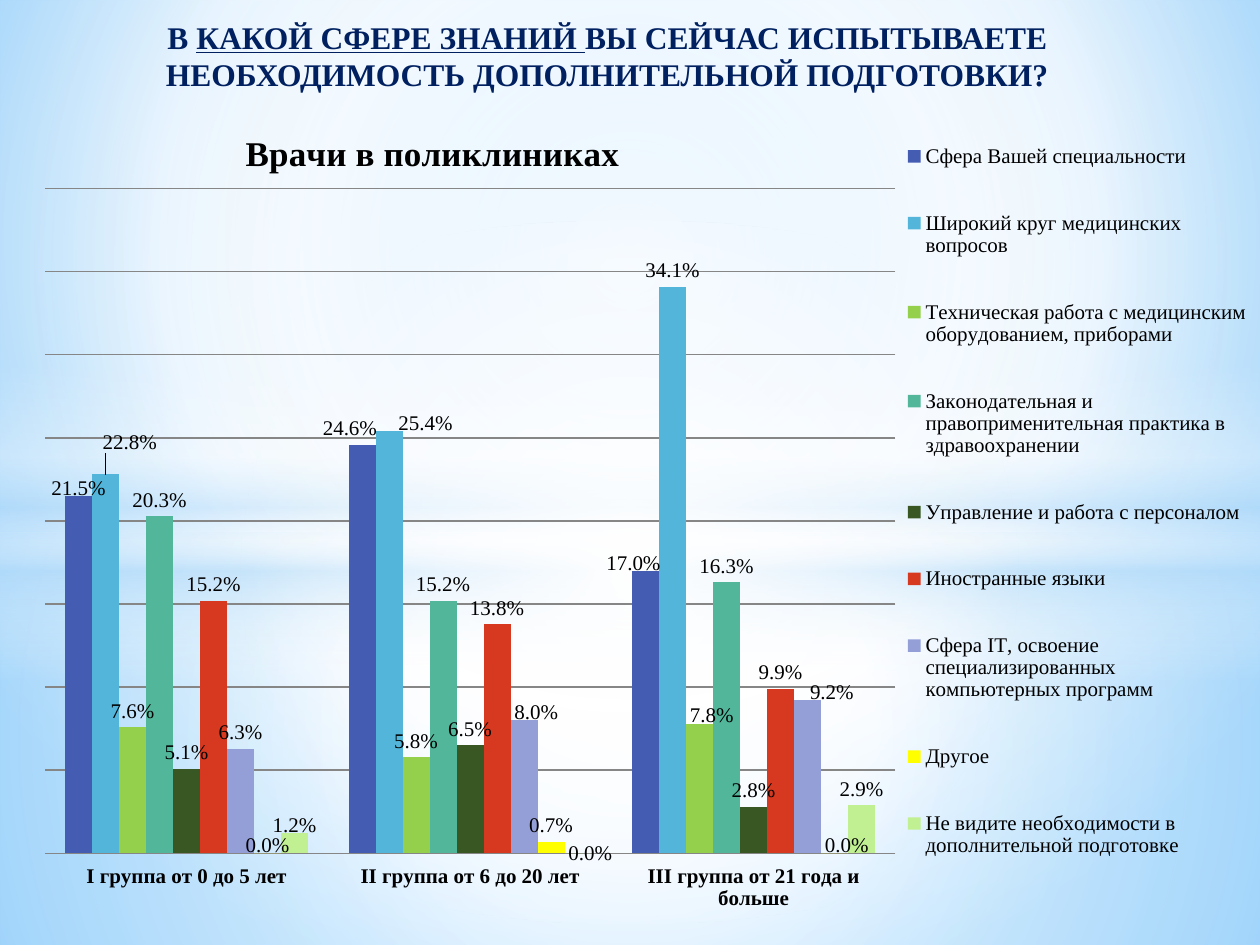
from dataclasses import dataclass, field
from typing import Optional

from lxml.etree import SubElement
from pptx import Presentation
from pptx.chart.data import CategoryChartData
from pptx.dml.color import RGBColor
from pptx.enum.chart import XL_CHART_TYPE as ChartType
from pptx.enum.chart import XL_LABEL_POSITION as LabelPos
from pptx.enum.chart import XL_LEGEND_POSITION as LegendPos
from pptx.enum.chart import XL_TICK_LABEL_POSITION as TickLabelPos
from pptx.enum.chart import XL_TICK_MARK as TickMark
from pptx.enum.shapes import MSO_SHAPE as Shape
from pptx.enum.text import PP_ALIGN as Align
from pptx.oxml import parse_xml
from pptx.oxml.ns import nsdecls, qn
from pptx.util import Cm, Pt

FONT = "Times New Roman"
FORMAT = "0.0%"
COLORS = {
    "sky": "9ED5FF", "white": "FFFFFF", "blue": "5BB9FF", "haze": "B4DCFA",
    "navy": "002060", "black": "000000", "grid": "868686",
    "indigo": "455CB3", "cyan": "52B5D9", "lime": "95D04C", "teal": "52B69A",
    "forest": "385723", "red": "D73920", "lilac": "949FD7", "yellow": "FFFF00",
    "pale_lime": "C1F092",
}


@dataclass
class Stop:
    pos: int
    color: str
    alpha: int = 100


@dataclass
class Glow:
    kind: Shape
    top: float
    height: float
    stops: list[Stop]
    angle: Optional[int] = None


@dataclass
class Series:
    name: str
    values: tuple[float, ...]
    color: str
    shifts: dict[int, tuple[float, float]] = field(default_factory=dict)


GLOWS = [
    Glow(Shape.RECTANGLE, 10.74, 8.31,
         [Stop(0, "white", 91), Stop(37, "white", 76), Stop(100, "haze", 79)]),
    Glow(Shape.RECTANGLE, 0, 10.74,
         [Stop(0, "white", 89), Stop(48, "white", 62), Stop(100, "haze", 79)]),
    Glow(Shape.RECTANGLE, 7.37, 6.35,
         [Stop(0, "white", 0), Stop(29, "white", 30), Stop(45, "haze", 40),
          Stop(55, "white", 26), Stop(65, "haze", 60), Stop(100, "white", 0)], 90),
    Glow(Shape.OVAL, 4.44, 14.17, [Stop(0, "white"), Stop(54, "white", 0)]),
]
GROUPS = ["I группа от 0 до 5 лет", "II группа от 6 до 20 лет",
          "III группа от 21 года и больше"]
SERIES = [
    Series("Сфера Вашей специальности", (0.215, 0.246, 0.17), "indigo",
           {0: (0, 0.01), 1: (-0.01, 0), 2: (-0.01, 0.01)}),
    Series("Широкий круг медицинских вопросов", (0.228, 0.254, 0.341), "cyan",
           {0: (0.02, -0.02), 1: (0.03, 0.01)}),
    Series("Техническая работа с медицинским оборудованием, приборами",
           (0.076, 0.058, 0.078), "lime", {2: (0.01, 0.01)}),
    Series("Законодательная и правоприменительная практика в здравоохранении",
           (0.203, 0.152, 0.163), "teal"),
    Series("Управление и работа с персоналом", (0.051, 0.065, 0.028), "forest"),
    Series("Иностранные языки", (0.152, 0.138, 0.099), "red"),
    Series("Сфера IT, освоение специализированных компьютерных программ",
           (0.063, 0.08, 0.092), "lilac", {1: (0.01, 0.01), 2: (0.02, 0.01)}),
    Series("Другое", (0, 0.007, 0), "yellow", {0: (0, 0.01), 2: (0.01, 0.01)}),
    Series("Не видите необходимости в дополнительной подготовке",
           (0.012, 0, 0.029), "pale_lime", {0: (0, 0.01), 1: (0.01, 0.02)}),
]
TITLE = [("В ", False), ("КАКОЙ СФЕРЕ ЗНАНИЙ ", True),
         ("ВЫ СЕЙЧАС ИСПЫТЫВАЕТЕ НЕОБХОДИМОСТЬ ДОПОЛНИТЕЛЬНОЙ ПОДГОТОВКИ?", False)]


def rgb(name: str) -> RGBColor:
    return RGBColor.from_string(COLORS[name])


def style(font, size: int, color: str, bold: bool = False) -> None:
    font.name, font.size, font.bold = FONT, Pt(size), bold
    font.color.rgb = rgb(color)


def gradient(stops: list[Stop], angle: Optional[int] = None,
             center: tuple[int, ...] = (50, 50, 50, 50)):
    items = "".join(
        f'<a:gs pos="{s.pos * 1000}"><a:srgbClr val="{COLORS[s.color]}">'
        f'<a:alpha val="{s.alpha * 1000}"/></a:srgbClr></a:gs>' for s in stops)
    if angle is None:
        sides = " ".join(f'{k}="{v * 1000}"' for k, v in zip("ltrb", center))
        shade = f'<a:path path="circle"><a:fillToRect {sides}/></a:path>'
    else:
        shade = f'<a:lin ang="{angle * 60000}" scaled="0"/>'
    return parse_xml(f'<a:gradFill {nsdecls("a")} rotWithShape="1">'
                     f'<a:gsLst>{items}</a:gsLst>{shade}</a:gradFill>')


def set_background(slide) -> None:
    slide.background.fill.solid()
    old = slide.element.find(f'.//{qn("p:bgPr")}/{qn("a:solidFill")}')
    stops = [Stop(0, "sky"), Stop(60, "white"), Stop(100, "blue")]
    old.getparent().replace(old, gradient(stops, center=(20, 10, 20, 60)))


def add_glow(slide, glow: Glow) -> None:
    s = slide.shapes.add_shape(glow.kind, 0, Cm(glow.top), Cm(25.4), Cm(glow.height))
    s.shadow.inherit = False
    s.line.fill.background()
    s.fill.solid()
    old = s.element.spPr.find(qn("a:solidFill"))
    s.element.spPr.replace(old, gradient(glow.stops, glow.angle))


def place(parent, index: int, inner: bool = False, edge: bool = True, **box: float) -> None:
    for old in parent.findall(qn("c:layout")):
        parent.remove(old)
    layout = parse_xml(f'<c:layout {nsdecls("c")}><c:manualLayout/></c:layout>')
    parent.insert(index, layout)
    entries = {"layoutTarget": "inner"} if inner else {}
    if edge:
        entries |= {"xMode": "edge", "yMode": "edge"}
    for key, value in (entries | box).items():
        SubElement(layout[0], qn(f"c:{key}"), val=str(value))


def style_series(plot_series, series: Series) -> None:
    plot_series.format.fill.solid()
    plot_series.format.fill.fore_color.rgb = rgb(series.color)
    plot_series.invert_if_negative = False
    labels = plot_series.data_labels
    labels.show_value = True
    labels.number_format, labels.number_format_is_linked = FORMAT, False
    labels.position = LabelPos.OUTSIDE_END
    style(labels.font, 12, "black")
    for i, (dx, dy) in series.shifts.items():
        plot_series.points[i].data_label.position = LabelPos.OUTSIDE_END
        label = labels._element.find(f'{qn("c:dLbl")}[{qn("c:idx")}][@val]')
        label = next(d for d in labels._element.findall(qn("c:dLbl"))
                     if d.find(qn("c:idx")).get("val") == str(i))
        place(label, 1, edge=False, x=dx, y=dy)


def add_chart(slide) -> None:
    data = CategoryChartData(number_format=FORMAT)
    data.categories = GROUPS
    for series in SERIES:
        data.add_series(series.name, series.values)
    chart = slide.shapes.add_chart(ChartType.COLUMN_CLUSTERED, Cm(0.89), Cm(2.03),
                                   Cm(24.51), Cm(16.31), data).chart
    style(chart.font, 12, "black")
    chart.has_title = True
    p = chart.chart_title.text_frame.paragraphs[0]
    p.text = "Врачи в поликлиниках"
    style(p.font, 20, "black", True)
    place(chart.chart_title._element, 1, x=0.16, y=0.03)

    chart.has_legend = True
    chart.legend.position = LegendPos.RIGHT
    chart.legend.include_in_layout = False
    style(chart.legend.font, 12, "black")
    place(chart.legend._element, 1, x=0.72, y=0, w=0.28, h=1)

    plot = chart.plots[0]
    plot.gap_width, plot.overlap, plot.vary_by_categories = 150, 0, False
    area = chart.element.find(f'.//{qn("c:plotArea")}')
    place(area, 0, inner=True, x=0, y=0.11, w=0.7, h=0.83)
    for plot_series, series in zip(plot.series, SERIES):
        style_series(plot_series, series)

    values, groups = chart.value_axis, chart.category_axis
    values.minimum_scale, values.maximum_scale, values.major_unit = 0, 0.4, 0.05
    values.has_major_gridlines = True
    values.visible = False
    groups.major_tick_mark = TickMark.NONE
    groups.tick_label_position = TickLabelPos.LOW
    style(groups.tick_labels.font, 12, "black", True)
    for item in (values.major_gridlines, groups):
        item.format.line.color.rgb = rgb("grid")
        item.format.line.width = Pt(0.75)


def add_title(slide) -> None:
    tf = slide.shapes.add_textbox(Cm(1.5), Cm(0.23), Cm(21.49), Cm(1.8)).text_frame
    tf.word_wrap = True
    p = tf.paragraphs[0]
    p.alignment = Align.CENTER
    style(p.font, 18, "navy", True)
    for text, underlined in TITLE:
        r = p.add_run()
        r.text = text
        r.font.underline = underlined


def main() -> None:
    prs = Presentation()
    prs.slide_width, prs.slide_height = Cm(25.4), Cm(19.05)
    slide = prs.slides.add_slide(prs.slide_layouts[6])
    set_background(slide)
    for glow in GLOWS:
        add_glow(slide, glow)
    add_chart(slide)
    add_title(slide)
    prs.save("out.pptx")


if __name__ == "__main__":
    main()
